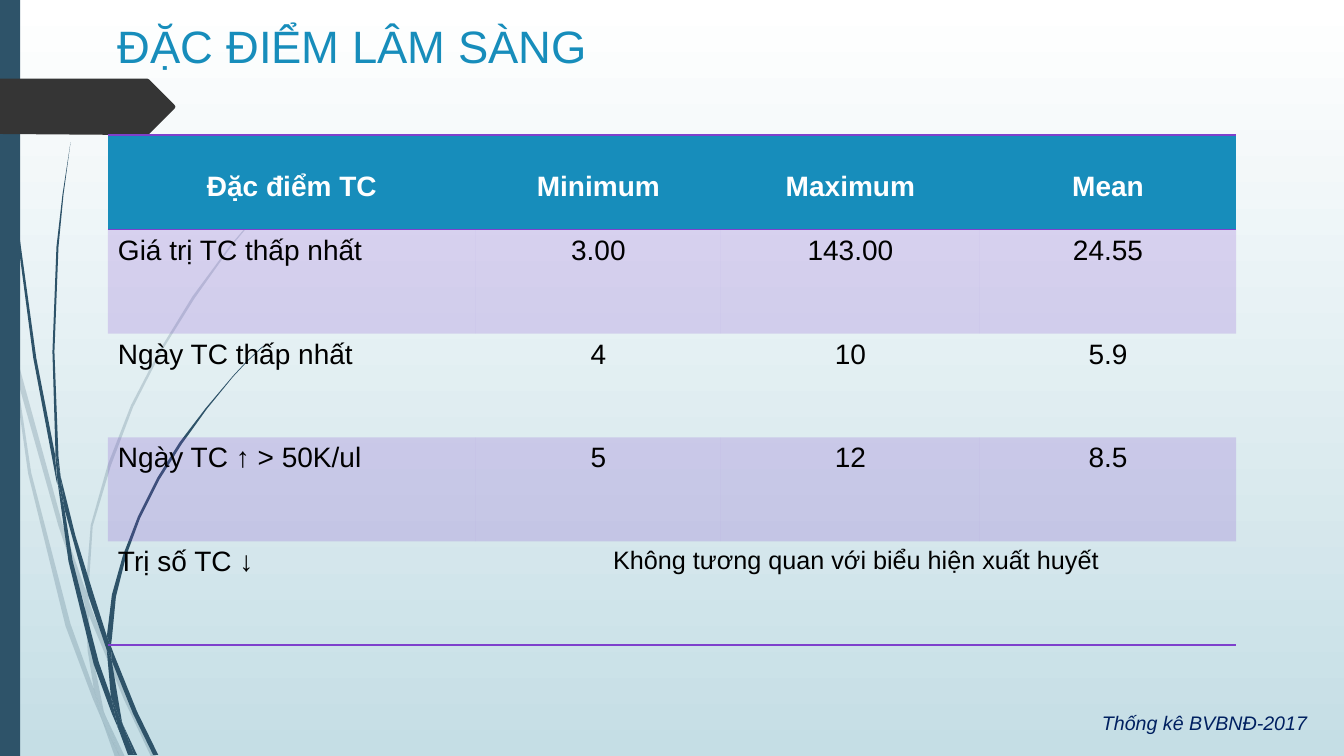
from lxml.etree import SubElement
from pptx import Presentation
from pptx.dml.color import RGBColor
from pptx.enum.shapes import MSO_SHAPE
from pptx.enum.text import MSO_ANCHOR, PP_ALIGN
from pptx.oxml import parse_xml
from pptx.oxml.ns import nsdecls, qn
from pptx.util import Pt

PX = 9144  # 100 px to the inch
COLORS = {"dark": "2E5369", "tag": "353535", "blue": "178DBB", "purple": "7E40CC",
          "white": "FFFFFF", "black": "000000", "navy": "002060", "mist": "C5DEE5"}
NO_STYLE = "{2D5ABB26-0587-4C30-8999-92F81FD0307C}"

PALE_WISPS = [
    [(11, 350), (9, 322), (0, 282), (0, 299), (10, 344)],
    [(58, 522), (84, 599), (85, 586), (62, 520), (14, 345), (17, 376)],
    [(92, 607), (88, 596), (88, 610), (123, 694), (150, 751), (155, 751), (127, 692)],
    [(119, 751), (124, 751), (105, 711)],
    [(93, 683), (70, 619), (31, 469), (17, 376), (11, 350), (28, 470), (65, 621),
     (92, 693), (101, 714), (99, 707)],
    [(84, 599), (87, 646), (93, 683), (96, 692), (105, 711), (103, 706), (91, 646),
     (88, 610), (88, 608)],
    [(88, 584), (92, 522), (110, 462), (132, 404), (160, 349), (193, 296), (229, 245),
     (268, 198), (290, 175), (312, 154), (312, 153), (289, 175), (268, 197), (228, 244),
     (191, 294), (158, 348), (130, 402), (107, 461), (90, 521), (85, 584), (85, 586),
     (88, 596)],
    [(101, 714), (114, 751), (119, 751)],
    [(88, 608), (88, 596), (85, 586), (84, 599)],
    [(96, 692), (93, 683), (99, 707), (101, 714), (119, 751), (105, 711)],
]
DARK_WISPS = [
    [(7, 110), (17, 233), (33, 355), (56, 477), (57, 481), (55, 457), (55, 453), (36, 355),
     (19, 232), (8, 109), (5, 48), (4, 0), (3, 0), (4, 48)],
    [(88, 592), (106, 645), (106, 631), (93, 590), (75, 532), (60, 472), (64, 505)],
    [(113, 649), (110, 641), (111, 656), (132, 708), (152, 749), (157, 749), (136, 706)],
    [(110, 691), (98, 657), (72, 556), (64, 505), (57, 477), (68, 557), (93, 659),
     (111, 708), (117, 722), (116, 717)],
    [(60, 472), (58, 453), (54, 349), (58, 245), (63, 193), (70, 141), (62, 193),
     (56, 245), (52, 349), (55, 449)],
    [(133, 749), (136, 749), (122, 719)],
    [(57, 477), (64, 505), (60, 472), (55, 449), (55, 453)],
    [(111, 633), (115, 592), (125, 552), (139, 514), (158, 476), (180, 441), (205, 406),
     (231, 374), (245, 359), (261, 344), (260, 344), (245, 358), (231, 373), (204, 405),
     (178, 439), (156, 474), (137, 512), (122, 551), (111, 590), (106, 631), (110, 641)],
    [(117, 722), (127, 749), (131, 749)],
    [(106, 645), (110, 691), (116, 706), (122, 719), (121, 716), (111, 656), (109, 651)],
    [(106, 645), (109, 651), (111, 656), (110, 641), (106, 631)],
    [(116, 706), (110, 691), (116, 717), (117, 722), (130, 749), (133, 749), (122, 719)],
]
TAG = [(173, 108), (148, 133), (146, 134), (136, 134), (0, 133), (0, 78), (146, 78),
       (148, 79), (173, 104), (174, 106)]

COLS = [365, 243, 257, 254]
ROWS = [94] + [103] * 4
CELLS = [
    ["Đặc điểm TC", "Minimum", "Maximum", "Mean"],
    ["Giá trị TC thấp nhất", "3.00", "143.00", "24.55"],
    ["Ngày TC thấp nhất", "4", "10", "5.9"],
    ["Ngày TC ↑ > 50K/ul", "5", "12", "8.5"],
    ["Trị số TC ↓", "Không tương quan với biểu hiện xuất huyết"],
]


def rgb(name):
    return RGBColor.from_string(COLORS[name])


def paint(fill, color, alpha=100):
    """Fill with a colour at the given opacity in percent."""
    fill.solid()
    fill.fore_color.rgb = rgb(color)
    if alpha < 100:
        clr = fill._xPr.find(qn("a:solidFill"))[0]
        SubElement(clr, qn("a:alpha"), val=str(alpha * 1000))


def finish(sp, color, alpha=100):
    sp.shadow.inherit = False
    sp.line.fill.background()
    paint(sp.fill, color, alpha)


def add_outline(shapes, points, color, alpha=100):
    builder = shapes.build_freeform(*points[0], scale=PX)
    builder.add_line_segments(points[1:], close=True)
    finish(builder.convert_to_shape(), color, alpha)


def add_wisps(s, outlines, alpha=100):
    group = s.shapes.add_group_shape()
    for points in outlines:
        add_outline(group.shapes, points, "dark", alpha)


def place(sp, left, top, width, height):
    box = {"left": left, "top": top, "width": width, "height": height}
    for name, value in box.items():
        setattr(sp, name, value * PX)


def write(tf, text, color, align=PP_ALIGN.LEFT, **font):
    p = tf.paragraphs[0]
    p.alignment = align
    r = p.add_run()
    r.text = text
    r.font.color.rgb = rgb(color)
    for name, value in {"name": "Arial", **font}.items():
        setattr(r.font, name, value)


def add_border(cell, side):
    cell._tc.get_or_add_tcPr().insert(0, parse_xml(
        f'<a:{side} {nsdecls("a")} w="12700"><a:solidFill>'
        f'<a:srgbClr val="{COLORS["purple"]}"/></a:solidFill></a:{side}>'))


def add_title(s, text):
    title = s.shapes.title
    place(title, 107, 13, 975, 61)
    title.text_frame.vertical_anchor = MSO_ANCHOR.TOP
    write(title.text_frame, text, "blue", size=Pt(32.4))


def add_platelet_table(s):
    frame = s.shapes.add_table(len(ROWS), len(COLS), 107 * PX, 134 * PX,
                               sum(COLS) * PX, sum(ROWS) * PX)
    table = frame.table
    table.first_row = table.horz_banding = False
    table._tbl.tblPr.find(qn("a:tableStyleId")).text = NO_STYLE
    for column, width in zip(table.columns, COLS):
        column.width = width * PX
    for row, height in zip(table.rows, ROWS):
        row.height = height * PX
    last = len(ROWS) - 1
    table.cell(last, 1).merge(table.cell(last, 3))

    for i, texts in enumerate(CELLS):
        for j, text in enumerate(texts):
            cell = table.cell(i, j)
            centred = i == 0 or j > 0
            write(cell.text_frame, text, "black" if i else "white",
                  PP_ALIGN.CENTER if centred else PP_ALIGN.LEFT,
                  size=Pt(18 if i == last and j else 20), bold=i == 0)
            if i == 0:
                cell.margin_top = 36 * PX
                paint(cell.fill, "blue")
            elif i % 2:
                paint(cell.fill, "purple", 20)
            else:
                cell.fill.background()
    for j in range(len(COLS)):
        for i, side in ((0, "lnB"), (0, "lnT"), (last, "lnB")):
            add_border(table.cell(i, j), side)


def add_source_note(s, text):
    box = s.shapes.add_textbox(1083 * PX, 700 * PX, 231 * PX, 34 * PX)
    box.text_frame.word_wrap = False
    write(box.text_frame, text, "navy", size=Pt(14), italic=True)


def set_background(s):
    fill = s.background.fill
    fill.gradient()
    fill.gradient_angle = 270
    for stop, color in zip(fill.gradient_stops, ("white", "mist")):
        stop.color.rgb = rgb(color)


def main():
    prs = Presentation()
    prs.slide_width, prs.slide_height = 1333 * PX, 750 * PX
    s = prs.slides.add_slide(prs.slide_layouts[5])
    set_background(s)
    add_wisps(s, PALE_WISPS, 20)
    add_wisps(s, DARK_WISPS)
    bar = s.shapes.add_shape(MSO_SHAPE.RECTANGLE, 0, 0, 20 * PX, 750 * PX)
    finish(bar, "dark")
    add_outline(s.shapes, TAG, "tag")
    add_title(s, "ĐẶC ĐIỂM LÂM SÀNG")
    add_platelet_table(s)
    add_source_note(s, "Thống kê BVBNĐ-2017")
    prs.save("out.pptx")


if __name__ == "__main__":
    main()
